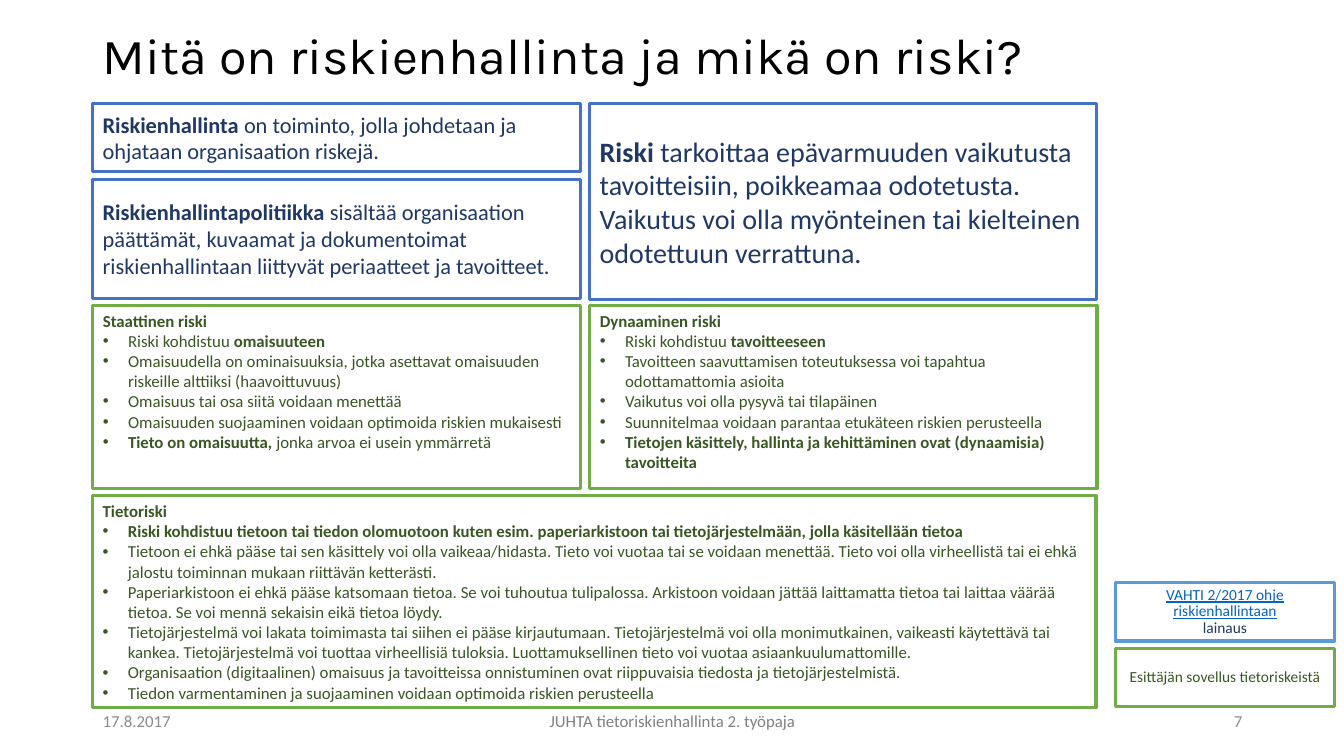
from pptx import Presentation
from pptx.dml.color import RGBColor
from pptx.enum.shapes import MSO_SHAPE
from pptx.enum.text import MSO_ANCHOR, MSO_AUTO_SIZE, PP_ALIGN
from pptx.oxml.ns import qn
from pptx.util import Inches, Pt
from lxml.etree import SubElement

COLORS = {
    "white": "FFFFFF", "black": "000000", "gray": "808080", "light_gray": "8C8C8C",
    "blue": "4472C4", "light_blue": "5B9BD5", "navy": "203864",
    "green": "70AD47", "dark_green": "385723", "link": "0563C1",
}
LEFT, RIGHT, SIDE = 0.92, 5.85, 11.06
LEFT_WIDTH, RIGHT_WIDTH, SIDE_WIDTH, SIDE_HEIGHT = 4.84, 5.03, 2.18, 0.58
RISK_TOP, RISK_HEIGHT = 3.03, 1.82
FOOTER_TOP, FOOTER_HEIGHT = 6.95, 0.4

DEFINITIONS = [
    (LEFT, 1.03, LEFT_WIDTH, 0.67, 16,
     "**Riskienhallinta **on toiminto, jolla johdetaan ja ohjataan organisaation riskejä."),
    (RIGHT, 1.03, RIGHT_WIDTH, 1.94, 20,
     "**Riski **tarkoittaa epävarmuuden vaikutusta tavoitteisiin, poikkeamaa odotetusta. "
     "Vaikutus voi olla myönteinen tai kielteinen odotettuun verrattuna."),
    (LEFT, 1.78, LEFT_WIDTH, 1.18, 16,
     "**Riskienhallintapolitiikka **sisältää organisaation päättämät, kuvaamat ja "
     "dokumentoimat riskienhallintaan liittyvät periaatteet ja tavoitteet."),
]
STATIC_RISK = [
    "**Staattinen riski**",
    "Riski kohdistuu **omaisuuteen**",
    "Omaisuudella on ominaisuuksia, jotka asettavat omaisuuden riskeille alttiiksi (haavoittuvuus)",
    "Omaisuus tai osa siitä voidaan menettää",
    "Omaisuuden suojaaminen voidaan optimoida riskien mukaisesti",
    "**Tieto on omaisuutta, **jonka arvoa ei usein ymmärretä",
]
DYNAMIC_RISK = [
    "**Dynaaminen riski**",
    "Riski kohdistuu **tavoitteeseen**",
    "Tavoitteen saavuttamisen toteutuksessa voi tapahtua odottamattomia asioita",
    "Vaikutus voi olla pysyvä tai tilapäinen",
    "Suunnitelmaa voidaan parantaa etukäteen riskien perusteella",
    "**Tietojen käsittely, hallinta ja kehittäminen ovat (dynaamisia) tavoitteita**",
]
INFORMATION_RISK = [
    "**Tietoriski**",
    "**Riski kohdistuu tietoon tai tiedon olomuotoon kuten esim. paperiarkistoon tai "
    "tietojärjestelmään, jolla käsitellään tietoa**",
    "Tietoon ei ehkä pääse tai sen käsittely voi olla vaikeaa/hidasta. Tieto voi vuotaa tai se "
    "voidaan menettää. Tieto voi olla virheellistä tai ei ehkä jalostu toiminnan mukaan "
    "riittävän ketterästi.",
    "Paperiarkistoon ei ehkä pääse katsomaan tietoa. Se voi tuhoutua tulipalossa. Arkistoon "
    "voidaan jättää laittamatta tietoa tai laittaa väärää tietoa. Se voi mennä sekaisin eikä "
    "tietoa löydy.",
    "Tietojärjestelmä voi lakata toimimasta tai siihen ei pääse kirjautumaan. Tietojärjestelmä "
    "voi olla monimutkainen, vaikeasti käytettävä tai kankea. Tietojärjestelmä voi tuottaa "
    "virheellisiä tuloksia. Luottamuksellinen tieto voi vuotaa asiaankuulumattomille.",
    "Organisaation (digitaalinen) omaisuus ja tavoitteissa onnistuminen ovat riippuvaisia "
    "tiedosta ja tietojärjestelmistä.",
    "Tiedon varmentaminen ja suojaaminen voidaan optimoida riskien perusteella",
]
FOOTER = [
    (0.92, 3, "17.8.2017", "light_gray", PP_ALIGN.LEFT),
    (4.42, 4.5, "JUHTA tietoriskienhallinta 2. työpaja", "gray", PP_ALIGN.CENTER),
    (9.42, 3, "7", "light_gray", PP_ALIGN.RIGHT),
]


class SlideBuilder:
    """Holds the text style and the slide being built."""

    def __init__(self, slide):
        self.slide = slide
        self.font = "Calibri"

    def color(self, name):
        return RGBColor.from_string(COLORS[name])

    def place(self, shape, left, top, width, height, anchor=MSO_ANCHOR.MIDDLE):
        shape.left, shape.top = Inches(left), Inches(top)
        shape.width, shape.height = Inches(width), Inches(height)
        frame = shape.text_frame
        frame.word_wrap = True
        frame.auto_size = MSO_AUTO_SIZE.NONE
        frame.vertical_anchor = anchor
        return frame

    def run(self, paragraph, text, size, color, bold=False, underline=False, font=None):
        run = paragraph.add_run()
        run.text = text
        run.font.name = font or self.font
        run.font.size = Pt(size)
        run.font.bold = bold
        run.font.underline = underline
        run.font.color.rgb = self.color(color)

    def runs(self, paragraph, marked_text, size, color):
        """Add runs, with the parts between double asterisks in bold."""
        for position, part in enumerate(marked_text.split("**")):
            if part:
                self.run(paragraph, part, size, color, bold=position % 2 == 1)

    def title(self, text):
        title = self.slide.shapes.title
        paragraph = self.place(title, LEFT, 0.13, 11.5, 0.9).paragraphs[0]
        paragraph.alignment = PP_ALIGN.LEFT
        paragraph.line_spacing = 0.9
        self.run(paragraph, text, 36, "black", font="Karla")

    def outline(self, shape, line):
        shape.fill.solid()
        shape.fill.fore_color.rgb = self.color("white")
        shape.line.color.rgb = self.color(line)
        shape.line.width = Pt(2.25)

    def box(self, left, top, width, height, line):
        box = self.slide.shapes.add_shape(
            MSO_SHAPE.RECTANGLE, Inches(left), Inches(top), Inches(width), Inches(height))
        box.shadow.inherit = False
        self.outline(box, line)
        return box

    def definition(self, left, top, width, height, size, text):
        box = self.box(left, top, width, height, "blue")
        paragraph = self.place(box, left, top, width, height).paragraphs[0]
        paragraph.alignment = PP_ALIGN.LEFT
        self.runs(paragraph, text, size, "navy")

    def risk_list(self, shape, left, top, width, height, lines):
        """Fill a panel with a heading and its bullets."""
        self.outline(shape, "green")
        frame = self.place(shape, left, top, width, height, MSO_ANCHOR.TOP)
        for position, line in enumerate(lines):
            paragraph = frame.add_paragraph() if position else frame.paragraphs[0]
            paragraph.alignment = PP_ALIGN.LEFT
            paragraph.space_before = Pt(0)
            indent = Inches(0.25) if position else 0
            properties = paragraph._p.get_or_add_pPr()
            properties.set("marL", str(indent))
            properties.set("indent", str(-indent))
            if position:
                SubElement(properties, qn("a:buFont"), typeface="Arial")
                SubElement(properties, qn("a:buChar"), char="•")
            else:
                SubElement(properties, qn("a:buNone"))
            self.runs(paragraph, line, 12, "dark_green")

    def side_note(self, top, line):
        box = self.box(SIDE, top, SIDE_WIDTH, SIDE_HEIGHT, line)
        paragraph = self.place(box, SIDE, top, SIDE_WIDTH, SIDE_HEIGHT).paragraphs[0]
        paragraph.alignment = PP_ALIGN.CENTER
        paragraph.line_spacing = 0.9
        return paragraph

    def footer(self, left, width, text, color, alignment):
        area = (left, FOOTER_TOP, width, FOOTER_HEIGHT)
        footer = self.slide.shapes.add_textbox(*map(Inches, area))
        paragraph = self.place(footer, *area).paragraphs[0]
        paragraph.alignment = alignment
        self.run(paragraph, text, 12, color)


def main():
    presentation = Presentation()
    presentation.slide_width, presentation.slide_height = Inches(13.33), Inches(7.5)
    slide = presentation.slides.add_slide(presentation.slide_layouts[3])
    builder = SlideBuilder(slide)

    builder.title("Mitä on riskienhallinta ja mikä on riski?")
    for entry in FOOTER:
        builder.footer(*entry)

    builder.risk_list(slide.placeholders[1], LEFT, RISK_TOP, LEFT_WIDTH, RISK_HEIGHT, STATIC_RISK)
    builder.risk_list(slide.placeholders[2], RIGHT, RISK_TOP, RIGHT_WIDTH, RISK_HEIGHT, DYNAMIC_RISK)
    information_area = (LEFT, 4.92, 9.95, 2.1)
    information_panel = builder.box(*information_area, "green")
    builder.risk_list(information_panel, *information_area, INFORMATION_RISK)

    for definition in DEFINITIONS:
        builder.definition(*definition)

    application = builder.side_note(6.43, "green")
    builder.run(application, "Esittäjän sovellus tietoriskeistä", 11, "dark_green")
    quotation = builder.side_note(5.78, "light_blue")
    builder.run(quotation, "VAHTI 2/2017 ohje riskienhallintaan", 11, "link", underline=True)
    quotation.add_line_break()
    builder.run(quotation, "lainaus", 11, "navy")

    presentation.save("out.pptx")


if __name__ == "__main__":
    main()
